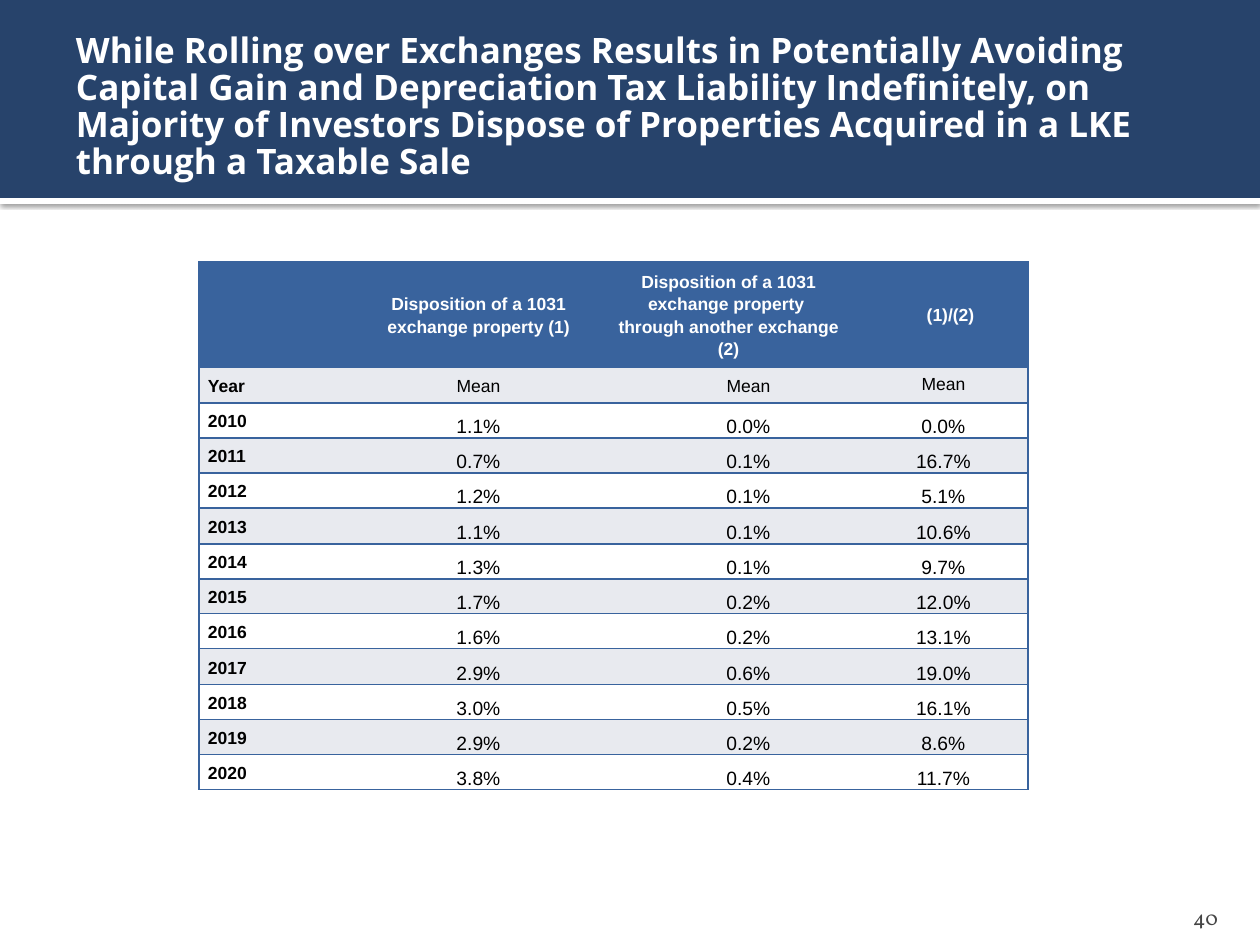
import pptx
import pptx.util
import pptx.dml.color
import pptx.enum.shapes
import pptx.enum.text
import pptx.oxml
import pptx.oxml.ns

SCALE = 914400 // 126  # EMU in one px
NAVY, BLUE, PALE, WHITE, BLACK = "27436B", "39639D", "E8EAEF", "FFFFFF", "000000"
ALIGN = pptx.enum.text.PP_ALIGN
ANCHOR = pptx.enum.text.MSO_ANCHOR
NS = pptx.oxml.ns.nsdecls("a")


def color(code):
    return pptx.dml.color.RGBColor.from_string(code)


def write(para, text, font, size, code, bold=False):
    for i, line in enumerate(text.split("\n")):
        if i:
            para.add_line_break()
        run = para.add_run()
        run.text = line
        run.font.name = font
        run.font.size = pptx.util.Pt(size)
        run.font.bold = bold
        run.font.color.rgb = color(code)


deck = pptx.Presentation()
deck.slide_width, deck.slide_height = 1260 * SCALE, 945 * SCALE
slide = deck.slides.add_slide(deck.slide_layouts[6])

# White strip with a shadow, then the title band
for top, high, code in [(198, 6, WHITE), (0, 198, NAVY)]:
    band = slide.shapes.add_shape(
        pptx.enum.shapes.MSO_SHAPE.RECTANGLE, 0, top * SCALE, 1260 * SCALE, high * SCALE)
    band.shadow.inherit = False
    band.fill.solid()
    band.fill.fore_color.rgb = color(code)
    band.line.fill.background()
    if code == WHITE:
        glow = pptx.oxml.parse_xml(
            f'<a:outerShdw {NS} blurRad="31750" dist="10160" dir="5400000" rotWithShape="0">'
            f'<a:srgbClr val="{BLACK}"><a:alpha val="60000"/></a:srgbClr></a:outerShdw>')
        band.element.spPr.find(pptx.oxml.ns.qn("a:effectLst")).append(glow)

# Title and page number
title = ("While Rolling over Exchanges Results in Potentially Avoiding Capital Gain and "
         "Depreciation Tax Liability Indefinitely, on Majority of Investors Dispose of "
         "Properties Acquired in a LKE through a Taxable Sale")
for spot, pads, anchor, align, space, style in [
    ((63, 21, 1134, 173), (13, 6, 6, 6), ANCHOR.MIDDLE, ALIGN.LEFT, 0.88,
     (title, "Open Sans", 20, WHITE, True)),
    ((1130, 892, 101, 38), (13, 6, 13, 0), ANCHOR.BOTTOM, ALIGN.RIGHT, 1,
     ("40", "Vollkorn", 12, "454545")),
]:
    frame = slide.shapes.add_textbox(*[n * SCALE for n in spot]).text_frame
    frame.word_wrap = True
    frame.vertical_anchor = anchor
    frame.margin_left, frame.margin_top, frame.margin_right, frame.margin_bottom = [
        n * SCALE for n in pads]
    para = frame.paragraphs[0]
    para.alignment = align
    para.line_spacing = space
    write(para, *style)

# Table data
data = [
    ("", "Disposition of a 1031 exchange property (1)",
     "Disposition of a 1031 exchange property \nthrough another exchange (2)", "(1)/(2)"),
    ("Year", "Mean", "Mean", "Mean"),
    ("2010", "1.1%", "0.0%", "0.0%"),
    ("2011", "0.7%", "0.1%", "16.7%"),
    ("2012", "1.2%", "0.1%", "5.1%"),
    ("2013", "1.1%", "0.1%", "10.6%"),
    ("2014", "1.3%", "0.1%", "9.7%"),
    ("2015", "1.7%", "0.2%", "12.0%"),
    ("2016", "1.6%", "0.2%", "13.1%"),
    ("2017", "2.9%", "0.6%", "19.0%"),
    ("2018", "3.0%", "0.5%", "16.1%"),
    ("2019", "2.9%", "0.2%", "8.6%"),
    ("2020", "3.8%", "0.4%", "11.7%"),
]
wide = [160, 239, 261, 169]
# Body rows are 35.25 px on average
tall = [105] + [35 + (i % 4 == 0) for i in range(12)]

# Table grid
table = slide.shapes.add_table(
    len(data), len(wide), 199 * SCALE, 262 * SCALE, sum(wide) * SCALE, sum(tall) * SCALE).table
table.first_row = table.horz_banding = False
for col, size in zip(table.columns, wide):
    col.width = size * SCALE
for row, size in zip(table.rows, tall):
    row.height = size * SCALE

# Table cells
for r, row in enumerate(data):
    for c, text in enumerate(row):
        cell = table.cell(r, c)
        value = r > 1 and c > 0
        cell.vertical_anchor = ANCHOR.BOTTOM if value else ANCHOR.MIDDLE
        cell.margin_left = cell.margin_right = 9 * SCALE
        cell.margin_top = cell.margin_bottom = 0

        # Rules above and below, sides only at the outer edge
        props = cell._tc.get_or_add_tcPr()
        for side, shown in [("L", c == 0), ("R", c == 3), ("T", True), ("B", True)]:
            paint = f'<a:solidFill><a:srgbClr val="{BLUE}"/></a:solidFill>' if shown else "<a:noFill/>"
            props.append(pptx.oxml.parse_xml(f'<a:ln{side} {NS} w="12700">{paint}</a:ln{side}>'))
        cell.fill.solid()
        cell.fill.fore_color.rgb = color(BLUE if r == 0 else PALE if r % 2 else WHITE)

        para = cell.text_frame.paragraphs[0]
        para.alignment = ALIGN.CENTER if c else ALIGN.LEFT
        para.line_spacing = 1 if r and c == 3 else 1.15
        shift = 40 if r and c == 2 else 14 if r == 0 and c == 3 else 0
        if shift:
            para._p.get_or_add_pPr().set("indent", str(shift * SCALE))
        if text:
            write(para, text, "Arial", 11 if value else 10,
                  BLACK if r else WHITE, r == 0 or c == 0)

deck.save("out.pptx")
